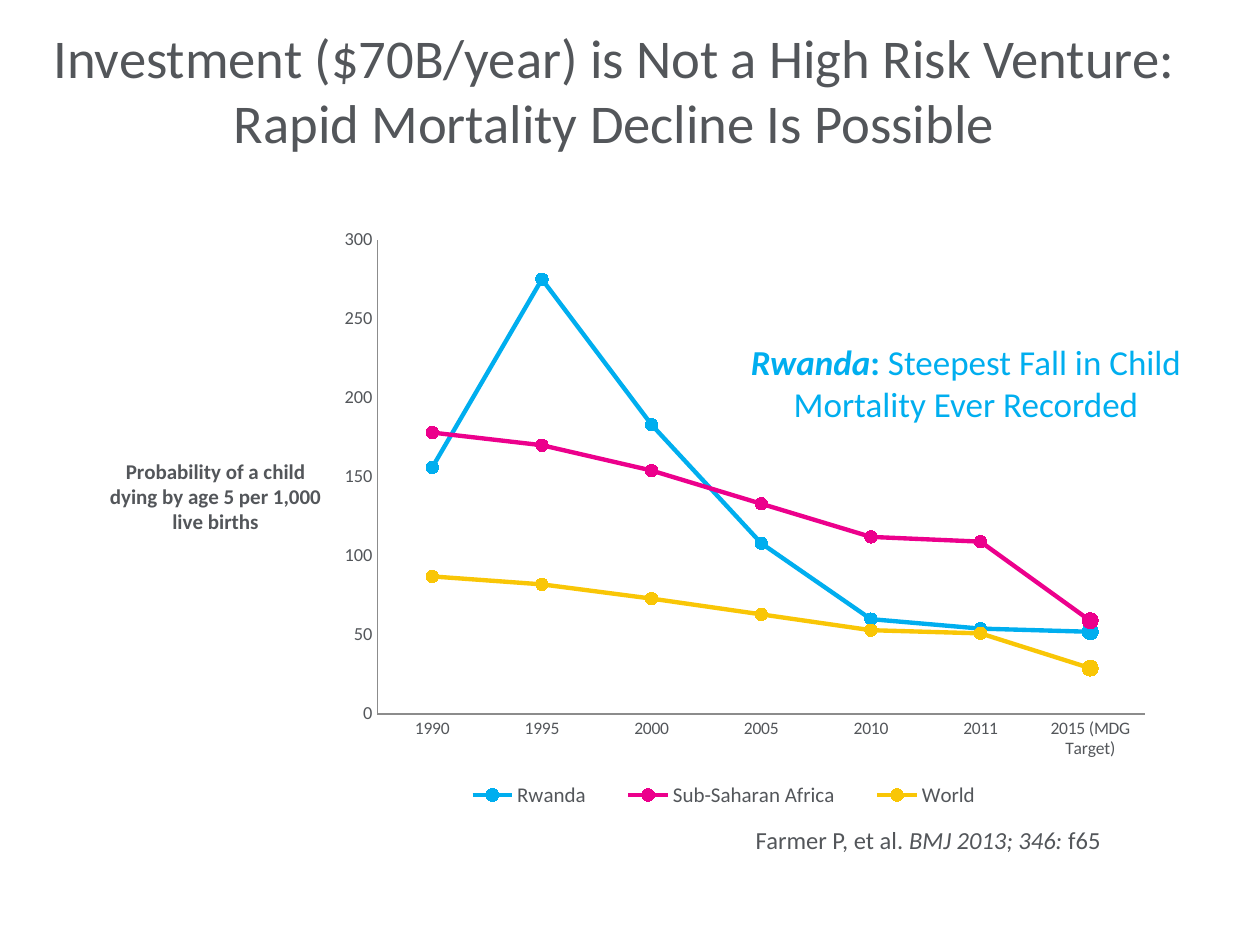
import pptx
import pptx.chart.data
import pptx.dml.color
import pptx.enum.chart
import pptx.enum.text
import pptx.oxml
import pptx.oxml.ns
import pptx.util

GRAY = pptx.dml.color.RGBColor(0x53, 0x56, 0x5A)
AXIS_GRAY = pptx.dml.color.RGBColor(0x8C, 0x8C, 0x8C)
BLUE = pptx.dml.color.RGBColor(0x00, 0xAE, 0xEF)
PINK = pptx.dml.color.RGBColor(0xEC, 0x00, 0x8C)
YELLOW = pptx.dml.color.RGBColor(0xF9, 0xC6, 0x06)

YEARS = ["1990", "1995", "2000", "2005", "2010", "2011", "2015 (MDG Target)"]
MORTALITY = [
    ("Rwanda", BLUE, (156, 275, 183, 108, 60, 54, 52)),
    ("Sub-Saharan Africa", PINK, (178, 170, 154, 133, 112, 109, 59)),
    ("World", YELLOW, (87, 82, 73, 63, 53, 51, 29)),
]


def px(length):
    return pptx.util.Emu(round(length * 914400 / 126))


def format_font(font, size, color=GRAY, bold=False, italic=False):
    font.name = "Calibri"
    font.size = pptx.util.Pt(size)
    font.color.rgb = color
    font.bold = bold
    font.italic = italic


def add_run(paragraph, text, **style):
    run = paragraph.add_run()
    run.text = text
    format_font(run.font, **style)


def manual_layout(x, y, width=None, height=None, inner=False):
    values = [("xMode", "edge"), ("yMode", "edge"), ("x", x), ("y", y)]
    if inner:
        values.insert(0, ("layoutTarget", "inner"))
    if width is not None:
        values += [("w", width), ("h", height)]
    items = "".join(f'<c:{name} val="{value}"/>' for name, value in values)
    return pptx.oxml.parse_xml(
        f'<c:layout {pptx.oxml.ns.nsdecls("c")}>'
        f"<c:manualLayout>{items}</c:manualLayout></c:layout>"
    )


def place(element, layout, predecessor):
    for old_layout in element.findall(pptx.oxml.ns.qn("c:layout")):
        element.remove(old_layout)
    if predecessor is None:
        element.insert(0, layout)
    else:
        element.find(pptx.oxml.ns.qn(predecessor)).addnext(layout)


def format_marker(marker, size, color):
    marker.style = pptx.enum.chart.XL_MARKER_STYLE.CIRCLE
    marker.size = size
    marker.format.fill.solid()
    marker.format.fill.fore_color.rgb = color
    marker.format.line.color.rgb = color


def format_line(line, color, width):
    line.color.rgb = color
    line.width = pptx.util.Pt(width)


class MortalitySlide:
    def __init__(self, presentation):
        self.slide = presentation.slides.add_slide(presentation.slide_layouts[6])

    def text(self, left, top, width, height, runs, align, anchor):
        shape = self.slide.shapes.add_textbox(px(left), px(top), px(width), px(height))
        frame = shape.text_frame
        frame.word_wrap = True
        frame.vertical_anchor = anchor
        paragraph = frame.paragraphs[0]
        paragraph.alignment = align
        for text, style in runs:
            add_run(paragraph, text, **style)

    def line_chart(self, left, top, width, height, axis_title):
        data = pptx.chart.data.CategoryChartData()
        data.categories = YEARS
        for name, color, values in MORTALITY:
            data.add_series(name, values)
        chart = self.slide.shapes.add_chart(
            pptx.enum.chart.XL_CHART_TYPE.LINE_MARKERS,
            px(left), px(top), px(width), px(height), data,
        ).chart
        chart.has_title = False
        format_font(chart.font, 18)
        place(chart.plots[0]._element.getparent(),
              manual_layout(0.276, 0.033, 0.696, 0.792, inner=True), None)
        for series, (name, color, values) in zip(chart.plots[0].series, MORTALITY):
            series.smooth = False
            format_line(series.format.line, color, 2.5)
            format_marker(series.marker, 7, color)
            target = series.points[len(values) - 1]
            format_line(target.format.line, color, 2.5)
            format_marker(target.marker, 9, color)
        self.axes(chart, axis_title)
        self.legend(chart)

    def axes(self, chart, title):
        for axis, size in ((chart.category_axis, 10), (chart.value_axis, 10.5)):
            axis.has_major_gridlines = False
            axis.major_tick_mark = pptx.enum.chart.XL_TICK_MARK.NONE
            axis.minor_tick_mark = pptx.enum.chart.XL_TICK_MARK.NONE
            format_line(axis.format.line, AXIS_GRAY, 0.75)
            format_font(axis.tick_labels.font, size)
        value_axis = chart.value_axis
        value_axis.minimum_scale = 0
        value_axis.maximum_scale = 300
        value_axis.major_unit = 50
        frame = value_axis.axis_title.text_frame
        paragraph = frame.paragraphs[0]
        paragraph.alignment = pptx.enum.text.PP_ALIGN.CENTER
        add_run(paragraph, title, size=12, bold=True)
        body = frame._txBody.find(pptx.oxml.ns.qn("a:bodyPr"))
        body.set("rot", "0")
        body.set("vert", "horz")
        place(value_axis.axis_title._element, manual_layout(0.03, 0.39), "c:tx")

    def legend(self, chart):
        chart.has_legend = True
        chart.legend.position = pptx.enum.chart.XL_LEGEND_POSITION.BOTTOM
        chart.legend.include_in_layout = False
        format_font(chart.legend.font, 12)
        place(chart.legend._element, manual_layout(0.33, 0.92, 0.52, 0.08), "c:legendPos")


def main():
    presentation = pptx.Presentation()
    presentation.slide_width = px(1260)
    presentation.slide_height = px(945)
    slide = MortalitySlide(presentation)
    center = pptx.enum.text.PP_ALIGN.CENTER
    right = pptx.enum.text.PP_ALIGN.RIGHT
    middle = pptx.enum.text.MSO_ANCHOR.MIDDLE
    top = pptx.enum.text.MSO_ANCHOR.TOP

    slide.line_chart(73, 220, 1103, 599,
                     "Probability of a child dying by age 5 per 1,000 live births")
    slide.text(735, 252, 462, 262, [
        ("Rwanda", dict(size=20, color=BLUE, bold=True, italic=True)),
        (":", dict(size=20, color=BLUE, bold=True)),
        (" Steepest Fall in Child Mortality Ever Recorded", dict(size=20, color=BLUE)),
    ], center, middle)
    slide.text(651, 819, 462, 43, [
        ("Farmer P, et al. ", dict(size=14)),
        ("BMJ 2013; 346: ", dict(size=14, italic=True)),
        ("f65", dict(size=14)),
    ], right, top)
    slide.text(31, 10, 1166, 158, [
        ("Investment ($70B/year) is Not a High Risk Venture: "
         "Rapid Mortality Decline Is Possible", dict(size=31.2)),
    ], center, middle)
    presentation.save("out.pptx")


if __name__ == "__main__":
    main()
